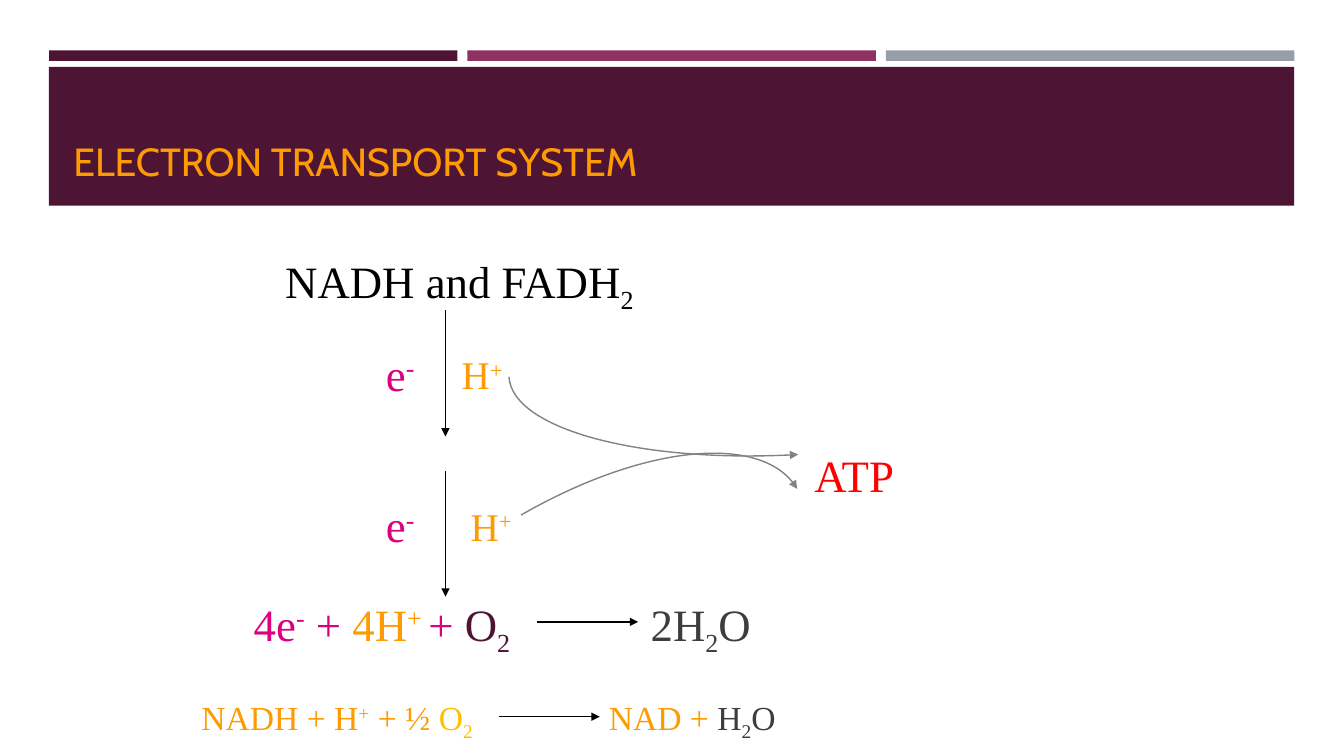
from lxml.etree import SubElement
from pptx import Presentation
from pptx.dml.color import RGBColor
from pptx.enum.shapes import MSO_CONNECTOR, MSO_SHAPE
from pptx.enum.text import MSO_ANCHOR, MSO_AUTO_SIZE
from pptx.oxml.ns import qn
from pptx.util import Pt

COLORS = {
    "plum": "4D1434", "berry": "903163", "slate": "969FA7",
    "orange": "FE9B03", "pink": "DC0081", "gold": "FFC000",
    "red": "FF0000", "dark": "3D3D3D", "gray": "828282", "black": "000000",
}
SERIF = "Times New Roman"
SUB, SUP = -25000, 30000


def color(name):
    return RGBColor.from_string(COLORS[name])


def bar(slide, x, y, w, h, fill):
    shape = slide.shapes.add_shape(MSO_SHAPE.RECTANGLE, Pt(x), Pt(y), Pt(w), Pt(h))
    shape.shadow.inherit = False
    shape.fill.solid()
    shape.fill.fore_color.rgb = color(fill)
    shape.line.fill.background()


def label(slide, x, y, w, h, runs, size, font=SERIF, wrap=False, tab=None):
    """Add one line of text; each run is (text, color, baseline shift)."""
    box = slide.shapes.add_textbox(Pt(x), Pt(y), Pt(w), Pt(h))
    frame = box.text_frame
    frame.word_wrap = wrap
    frame.auto_size = MSO_AUTO_SIZE.SHAPE_TO_FIT_TEXT
    para = frame.paragraphs[0]
    if tab:
        stops = SubElement(para._p.get_or_add_pPr(), qn("a:tabLst"))
        SubElement(stops, qn("a:tab"), pos=str(Pt(tab)), algn="l")
    para.font.size = Pt(size)
    para.font.name = font
    for text, tint, shift in runs:
        run = para.add_run()
        run.text = text
        run.font.color.rgb = color(tint)
        if shift:
            run._r.get_or_add_rPr().set("baseline", str(shift))
    return frame


def tip(line, tint):
    """Style a line and give its end an arrowhead."""
    line.color.rgb = color(tint)
    line.width = Pt(1)
    SubElement(line._get_or_add_ln(), qn("a:tailEnd"), type="triangle")


def arrow(slide, x, y, dx, dy):
    link = slide.shapes.add_connector(
        MSO_CONNECTOR.STRAIGHT, Pt(x), Pt(y), Pt(x + dx), Pt(y + dy))
    tip(link.line, "black")
    SubElement(link._element.spPr, qn("a:effectLst"))


def curve(slide, x, y, points):
    """Draw a cubic arrow through a start, two controls and an end."""
    start, *rest = [(Pt(x + px), Pt(y + py)) for px, py in points]
    pen = slide.shapes.build_freeform(*start)
    pen.add_line_segments(rest, close=False)
    shape = pen.convert_to_shape()
    shape.shadow.inherit = False
    shape.fill.background()
    tip(shape.line, "gray")
    track = shape._element.find(".//" + qn("a:path"))
    cubic = SubElement(track, qn("a:cubicBezTo"))
    for step in track.findall(qn("a:lnTo")):
        cubic.append(step[0])
        track.remove(step)


def header(slide, x, y, w, h):
    gap = 7.2
    part = (w - 2 * gap) / 3
    for i, fill in enumerate(("plum", "berry", "slate")):
        bar(slide, x + i * (part + gap), y, part, 7.5, fill)
    bar(slide, x, y + 11.8, w, h - 11.8, "plum")
    frame = label(slide, x + 10.3, y + 21.6, w - 21, 77.8,
                  [("ELECTRON TRANSPORT SYSTEM", "orange", 0)], 28, "Cabin", True)
    frame.auto_size = MSO_AUTO_SIZE.NONE
    frame.vertical_anchor = MSO_ANCHOR.BOTTOM


def chain(slide, x, y):
    label(slide, x + 6.6, y + 7.8, 267, 46,
          [("NADH and FADH", "black", 0), ("2", "black", SUB)], 32)
    for i in range(2):
        top = y + i * 108
        arrow(slide, x + 128.2, y + 51.8 + i * 114.4, 0, 90)
        label(slide, x + 78.6, top + 74, 36, 46,
              [("e", "pink", 0), ("-", "pink", SUP)], 32)
        label(slide, x + 132.6 + i * 6.4, top + 77, 46.8, 40.3,
              [("H", "orange", 0), ("+", "orange", SUP)], 28)
    curve(slide, x, y, [(173.6, 99.3), (175.8, 136), (267.9, 161.2), (380.2, 154.7)])
    curve(slide, x, y, [(182.2, 197.9), (268.6, 148.2), (356.5, 139.6), (379.5, 179.2)])
    label(slide, x + 384.6, y + 146, 72, 46, [("ATP", "red", 0)], 32)


def sums(slide, x, y):
    """Place the two summary equations."""
    label(slide, x + 37.4, y, 380, 46, [
        ("4e", "pink", 0), ("-", "pink", SUP), (" +", "pink", 0),
        (" 4H", "orange", 0), ("+ ", "orange", SUP), ("+ ", "pink", 0),
        ("O", "plum", 0), ("2\t", "plum", SUB),
        ("2H", "dark", 0), ("2", "dark", SUB), ("O", "dark", 0),
    ], 32, wrap=True, tab=283.5)
    arrow(slide, x + 247, y + 21.6, 72, 0)
    label(slide, x, y + 71.4, 484, 36, [
        ("NADH + H", "orange", 0), ("+", "orange", SUP), (" + ½ ", "orange", 0),
        ("O", "gold", 0), ("2\t", "gold", SUB), ("NAD + ", "orange", 0),
        ("H", "dark", 0), ("2", "dark", SUB), ("O", "dark", 0),
    ], 24, wrap=True, tab=291)
    arrow(slide, x + 219.6, y + 89.3, 72, 0)


def main():
    deck = Presentation()
    deck.slide_width, deck.slide_height = Pt(960), Pt(540)
    slide = deck.slides.add_slide(deck.slide_layouts[6])
    header(slide, 35, 36, 889.5, 111)
    chain(slide, 190, 170)
    sums(slide, 136.8, 422.6)
    deck.save("out.pptx")


if __name__ == "__main__":
    main()
